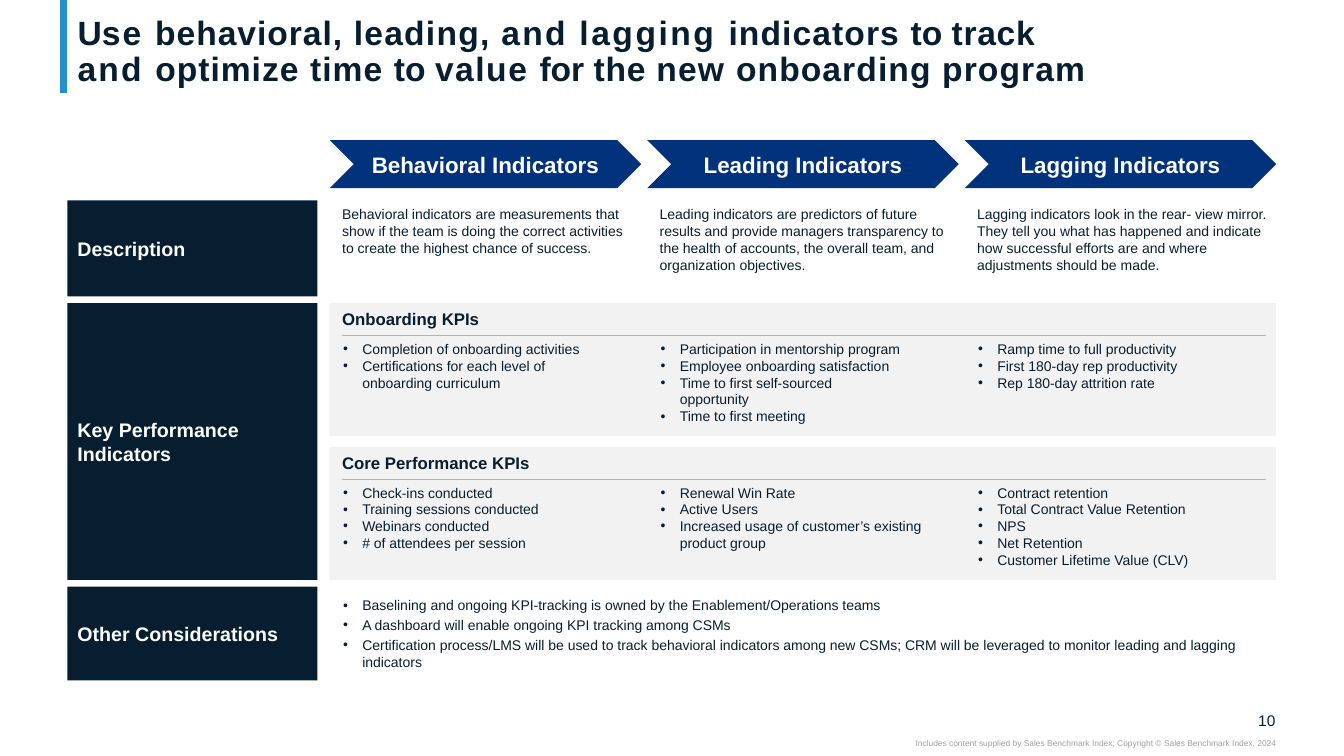
from lxml import etree
from pptx import Presentation
from pptx.dml.color import RGBColor
from pptx.enum import shapes, text
from pptx.oxml import ns
from pptx.util import Pt

COLORS = {"navy": "071E31", "blue": "03327C", "accent": "2391CF", "rule": "7AC3F8",
          "panel": "F2F2F2", "white": "FFFFFF", "gray": "A0A0A0"}
LEFT, RIGHT = 48.2, 911.5
PANEL_X, COLUMN_STEP = 235.5, 226.8
TEXT_X = 244.4
LABEL_WIDTH, CHEVRON_WIDTH = 178.6, 222.5

TITLE = [
    [("U", -0.6), ("se ", 1.6), ("behavioral, ", 0.7), ("leading, ", 0.9), ("and ", 1.6),
     ("lagging ", 1.8), ("indicators ", 0.8), ("to ", 0), ("track ", 0.5)],
    [("and ", 1.6), ("optimize ", 0.7), ("time ", 0.8), ("to ", 0), ("value ", 1.1),
     ("for ", 0), ("the ", 0.5), ("new ", 0.9), ("onboarding program", 0.8)],
]
LABELS = [("Description", 143.2, 68.6), ("Key Performance Indicators", 216.6, 197.6),
          ("Other Considerations", 419, 67)]
INDICATORS = [
    ("Behavioral Indicators",
     "Behavioral indicators are measurements that show if the team is doing the correct "
     "activities to create the highest chance of success."),
    ("Leading Indicators",
     "Leading indicators are predictors of future results and provide managers transparency "
     "to the health of accounts, the overall team, and organization objectives."),
    ("Lagging Indicators",
     "Lagging indicators look in the rear- view mirror. They tell you what has happened and "
     "indicate how successful efforts are and where adjustments should be made."),
]
KPI_PANELS = [
    ("Onboarding KPIs", 216.6, [
        ["Completion of onboarding activities",
         "Certifications for each level of onboarding curriculum"],
        ["Participation in mentorship program", "Employee onboarding satisfaction",
         "Time to first self-sourced opportunity", "Time to first meeting"],
        ["Ramp time to full productivity", "First 180-day rep productivity",
         "Rep 180-day attrition rate"]]),
    ("Core Performance KPIs", 319.2, [
        ["Check-ins conducted", "Training sessions conducted", "Webinars conducted",
         "# of attendees per session"],
        ["Renewal Win Rate", "Active Users",
         "Increased usage of customer’s existing product group"],
        ["Contract retention", "Total Contract Value Retention", "NPS", "Net Retention",
         "Customer Lifetime Value (CLV)"]]),
]
NARROW = {"Certifications for each level of onboarding curriculum",
          "Time to first self-sourced opportunity"}
CONSIDERATIONS = [
    "Baselining and ongoing KPI-tracking is owned by the Enablement/Operations teams",
    "A dashboard will enable ongoing KPI tracking among CSMs",
    "Certification process/LMS will be used to track behavioral indicators among new CSMs; "
    "CRM will be leveraged to monitor leading and lagging indicators",
]

prs = Presentation()
prs.slide_width, prs.slide_height = Pt(960), Pt(540)
s = prs.slides.add_slide(prs.slide_layouts[5])


def add_text(lines, x, y, w, h, size=10, color="navy", bold=False, align="LEFT",
             bullets=False, gap=0, shape=None, fill=None):
    """Add a plain text box, or a filled preset shape when shape is given."""
    box = [Pt(v) for v in (x, y, w, h)]
    if shape is None:
        sp = s.shapes.add_textbox(*box)
    else:
        sp = s.shapes.add_shape(shape, *box)
        sp.shadow.inherit = False
        sp.fill.solid()
        sp.fill.fore_color.rgb = RGBColor.from_string(COLORS[fill])
        sp.line.fill.background()
    tf = sp.text_frame
    tf.word_wrap = True
    if shape is None:
        tf.margin_left = tf.margin_right = tf.margin_top = tf.margin_bottom = 0
    else:
        tf.vertical_anchor = text.MSO_ANCHOR.MIDDLE
    for i, line in enumerate(lines):
        p = tf.paragraphs[0] if i == 0 else tf.add_paragraph()
        r = p.add_run()
        r.text = line
        if bullets:
            pPr = p._p.get_or_add_pPr()
            pPr.set("marL", str(Pt(14.4)))
            pPr.set("indent", str(-Pt(13.7)))
            if line in NARROW:
                pPr.set("marR", str(Pt(40)))
            etree.SubElement(pPr, ns.qn("a:buFont"), typeface="Arial")
            etree.SubElement(pPr, ns.qn("a:buChar"), char="•")
        p.alignment = text.PP_ALIGN[align]
        if i and gap:
            p.space_before = Pt(gap)
        for name, value in {"name": "Arial", "size": Pt(size), "bold": bold}.items():
            setattr(r.font, name, value)
        r.font.color.rgb = RGBColor.from_string(COLORS[color])
    return sp


def add_line(x1, y1, x2, y2, color, width):
    line = s.shapes.add_connector(shapes.MSO_CONNECTOR.STRAIGHT,
                                  *[Pt(v) for v in (x1, y1, x2, y2)])
    line.line.color.rgb = RGBColor.from_string(COLORS[color])
    line.line.width = Pt(width)
    etree.SubElement(line._element.spPr, ns.qn("a:effectLst"))


# Title
add_line(45.6, 0, 45.6, 66.5, "accent", 5)
title = s.shapes.title
title.left, title.top, title.width, title.height = Pt(LEFT), Pt(2.9), Pt(863.3), Pt(60.5)
tf = title.text_frame
for name, value in {"margin_left": Pt(7.2), "margin_right": Pt(7.2), "margin_top": 0,
                    "margin_bottom": 0, "word_wrap": True,
                    "auto_size": text.MSO_AUTO_SIZE.NONE,
                    "vertical_anchor": text.MSO_ANCHOR.BOTTOM}.items():
    setattr(tf, name, value)
p = tf.paragraphs[0]
p.alignment = text.PP_ALIGN.LEFT
p.line_spacing = 0.9
for i, words in enumerate(TITLE):
    if i:
        p.add_line_break()
    for word, spacing in words:
        r = p.add_run()
        r.text = word
        for name, value in {"name": "Arial", "size": Pt(24), "bold": True}.items():
            setattr(r.font, name, value)
        r.font.color.rgb = RGBColor.from_string(COLORS["navy"])
        r._r.get_or_add_rPr().set("spc", str(round(spacing * 100)))

# Row labels
for label, y, h in LABELS:
    add_text([label], LEFT, y, LABEL_WIDTH, h, size=14, color="white", bold=True,
             shape=shapes.MSO_SHAPE.RECTANGLE, fill="navy")

# Column headings and descriptions
for i, (heading, description) in enumerate(INDICATORS):
    add_text([heading], PANEL_X + i * COLUMN_STEP, 100.1, CHEVRON_WIDTH, 34.3, size=16,
             color="white", bold=True, align="CENTER",
             shape=shapes.MSO_SHAPE.CHEVRON, fill="blue")
    add_text([description], TEXT_X + i * COLUMN_STEP, 146.9, 213 if i == 2 else 205.2, 48.2)

# KPI panels
for heading, y, columns in KPI_PANELS:
    add_text([], PANEL_X, y, RIGHT - PANEL_X, 95,
             shape=shapes.MSO_SHAPE.RECTANGLE, fill="panel")
    add_text([heading], TEXT_X, y + 3.9, 659.5, 14.4, size=12, bold=True)
    add_line(244.1, y + 23.2, 904, y + 23.2, "rule", 0.5)
    for i, kpis in enumerate(columns):
        add_text(kpis, TEXT_X + i * COLUMN_STEP, y + 26.6, 222.5 if i == 2 else 205.2,
                 12 * len(kpis), bullets=True)

# Other considerations and footer
add_text(CONSIDERATIONS, TEXT_X, 426.4, 667.1, 52.5, bullets=True, gap=2)
add_text(["10"], 887, 507.6, 24, 13.7, size=11, align="RIGHT")
add_text(["Includes content supplied by Sales Benchmark Index; "
          "Copyright © Sales Benchmark Index, 2024"],
         540, 527, 371.5, 7.2, size=6, color="gray", align="RIGHT")

prs.save("out.pptx")
